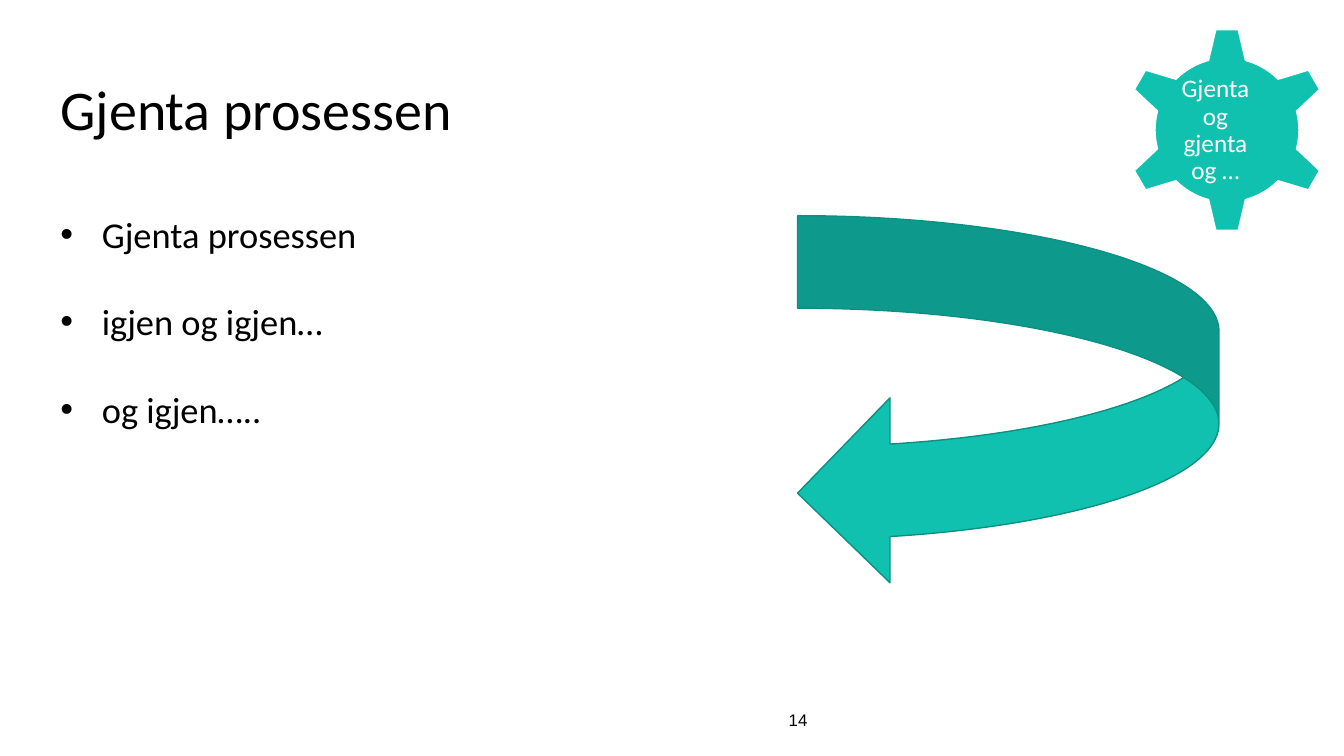
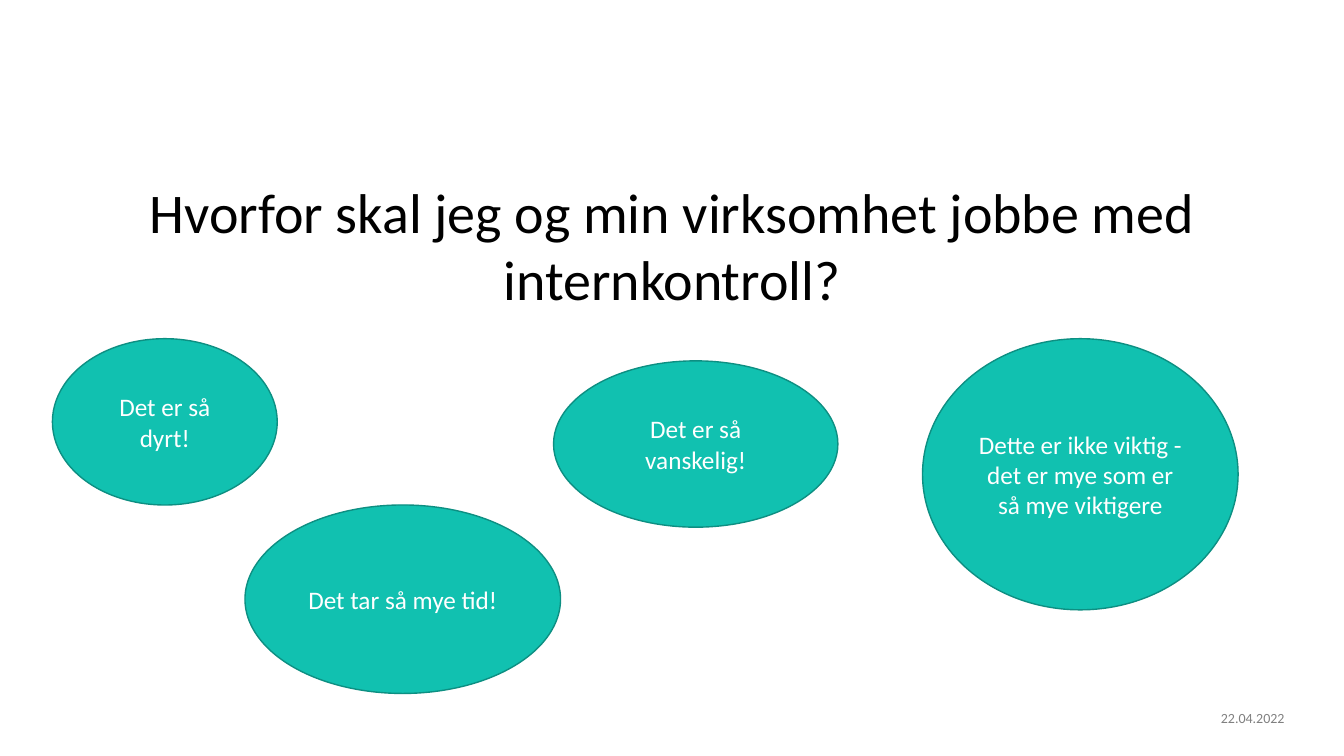
from pptx import Presentation
from pptx.dml.color import RGBColor
from pptx.enum.shapes import MSO_SHAPE
from pptx.enum.text import MSO_ANCHOR, MSO_AUTO_SIZE, PP_ALIGN
from pptx.oxml.ns import qn
from pptx.util import Pt

PX = 9144  # 100 px to the inch
TITLE_ONLY = 5

TEAL = RGBColor(0x11, 0xC1, 0xB0)
DARK_TEAL = RGBColor(0x0D, 0x8F, 0x82)
WHITE = RGBColor(0xFF, 0xFF, 0xFF)
BLACK = RGBColor(0x00, 0x00, 0x00)
GREY = RGBColor(0x80, 0x80, 0x80)

LEFT, CENTER, RIGHT = PP_ALIGN.LEFT, PP_ALIGN.CENTER, PP_ALIGN.RIGHT
TOP, MIDDLE = MSO_ANCHOR.TOP, MSO_ANCHOR.MIDDLE
ELLIPSE, GEAR = MSO_SHAPE.OVAL, MSO_SHAPE.GEAR_6
CURVED_ARROW = MSO_SHAPE.CURVED_LEFT_ARROW
NO_AUTOFIT = MSO_AUTO_SIZE.NONE

# Left, top, width, height and text of each objection
OBJECTIONS = [
    (52, 336, 223, 165, "Det er så dyrt!"),
    (243, 501, 313, 187, "Det tar så mye tid!"),
    (549, 358, 282, 165, "Det er så vanskelig!"),
    (915, 336, 313, 269,
     "Dette er ikke viktig - det er mye som er så mye viktigere"),
]


def emu(*lengths):
    return [length * PX for length in lengths]


def set_frame(frame, inset=0, anchor=TOP):
    frame.word_wrap = True
    frame.auto_size = NO_AUTOFIT
    frame.vertical_anchor = anchor
    frame.margin_left = frame.margin_right = inset * PX
    frame.margin_top = frame.margin_bottom = inset * PX


def write(paragraph, text, size, color=BLACK, align=LEFT, font="Calibri",
          spacing=1.0):
    paragraph.alignment = align
    paragraph.line_spacing = spacing
    run = paragraph.add_run()
    run.text = text
    run.font.size = Pt(size)
    run.font.name = font
    run.font.color.rgb = color


def add_title(slide, box, text, align=LEFT, spacing=1.0):
    title = slide.shapes.title
    title.left, title.top, title.width, title.height = emu(*box)
    set_frame(title.text_frame)
    write(title.text_frame.paragraphs[0], text, 40, align=align,
          spacing=spacing)


def add_text(slide, box, text, size, inset=0, anchor=TOP, **style):
    frame = slide.shapes.add_textbox(*emu(*box)).text_frame
    set_frame(frame, inset, anchor)
    write(frame.paragraphs[0], text, size, **style)


def add_bullets(slide, box, items, size, gap, indent):
    frame = slide.shapes.add_textbox(*emu(*box)).text_frame
    set_frame(frame)
    for index, item in enumerate(items):
        paragraph = frame.add_paragraph() if index else frame.paragraphs[0]
        properties = paragraph._p.get_or_add_pPr()
        properties.set("marL", str(indent * PX))
        properties.set("indent", str(-indent * PX))
        bullet_font = properties.makeelement(qn("a:buFont"),
                                             {"typeface": "Arial"})
        bullet = properties.makeelement(qn("a:buChar"), {"char": "•"})
        properties.extend([bullet_font, bullet])
        if index:
            paragraph.space_before = Pt(gap)
        write(paragraph, item, size)


def add_teal_shape(slide, kind, box, outline=DARK_TEAL):
    shape = slide.shapes.add_shape(kind, *emu(*box))
    shape.shadow.inherit = False
    shape.fill.solid()
    shape.fill.fore_color.rgb = TEAL
    shape.line.color.rgb = outline
    shape.line.width = Pt(1)
    return shape


def add_objection(slide, box, text):
    ellipse = add_teal_shape(slide, ELLIPSE, box)
    frame = ellipse.text_frame
    frame.word_wrap = True
    frame.vertical_anchor = MIDDLE
    write(frame.paragraphs[0], text, 18, WHITE, CENTER)


def new_slide(prs):
    return prs.slides.add_slide(prs.slide_layouts[TITLE_ONLY])


def build_repeat_slide(prs):
    slide = new_slide(prs)
    add_title(slide, (60, 81, 1055, 61), "Gjenta prosessen", spacing=0.9)
    add_bullets(slide, (60, 210, 685, 372),
                ["Gjenta prosessen", "igjen og igjen…", "og igjen….."],
                size=26, gap=31.5, indent=41)

    # Page number
    add_text(slide, (752, 704, 79, 20), "14", 12, align=CENTER, font="Arial")

    # Gear with its label, and the arrow turning back
    add_teal_shape(slide, GEAR, (1115, 27, 204, 204), WHITE)
    add_text(slide, (1166, 79, 79, 101), "Gjenta og gjenta og …", 18,
             inset=3, anchor=MIDDLE, color=WHITE, align=CENTER, spacing=0.9)
    add_teal_shape(slide, CURVED_ARROW, (791, 214, 418, 367))


def build_objections_slide(prs):
    slide = new_slide(prs)
    add_title(slide, (59, 176, 1215, 140),
              "Hvorfor skal jeg og min virksomhet jobbe med internkontroll?",
              align=CENTER)

    # Date
    add_text(slide, (1117, 704, 157, 17), "22.04.2022", 10, color=GREY,
             align=RIGHT)

    for *box, text in OBJECTIONS:
        add_objection(slide, box, text)


def main():
    prs = Presentation()
    prs.slide_width, prs.slide_height = emu(1333, 750)
    build_repeat_slide(prs)
    build_objections_slide(prs)
    prs.save("out.pptx")


if __name__ == "__main__":
    main()
